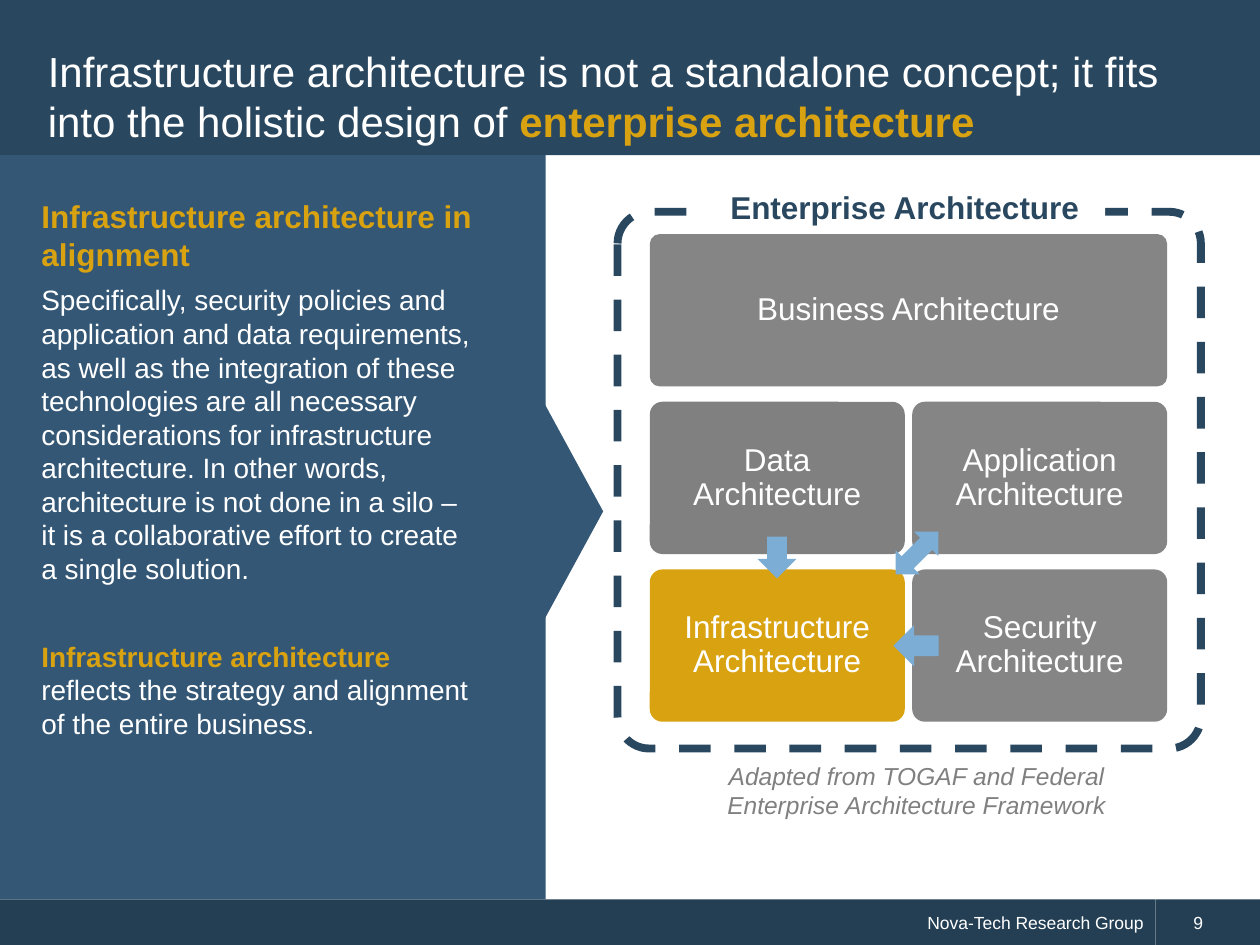
from dataclasses import dataclass

from lxml.etree import SubElement
from pptx import Presentation
from pptx.dml.color import RGBColor
from pptx.enum.dml import MSO_LINE
from pptx.enum.shapes import MSO_SHAPE
from pptx.enum.text import MSO_ANCHOR, MSO_AUTO_SIZE, PP_ALIGN
from pptx.oxml.ns import qn
from pptx.util import Cm, Pt


@dataclass(frozen=True)
class Theme:
    font: str = "Arial"
    white: str = "FFFFFF"
    navy: str = "29475F"
    foot: str = "243F54"
    panel: str = "335775"
    gold: str = "D9A210"
    grey: str = "858585"
    mid: str = "808080"
    sky: str = "7CADD4"
    title: int = 24
    head: int = 18
    body: int = 16
    note: int = 14
    small: int = 10


class Deck:
    """Holds the theme and the slide being built."""

    def __init__(self, theme):
        self.theme = theme
        self.prs = Presentation()
        self.prs.slide_width, self.prs.slide_height = Cm(25.4), Cm(19.05)
        self.slide = self.prs.slides.add_slide(self.prs.slide_layouts[1])

    def frame(self, item, anchor=MSO_ANCHOR.MIDDLE, **style):
        """Reset a shape's text frame, then apply any margins given."""
        frame = item.text_frame
        base = {"word_wrap": True, "auto_size": MSO_AUTO_SIZE.NONE,
                "vertical_anchor": anchor}
        for key, value in {**base, **style}.items():
            setattr(frame, key, value)
        return frame

    def para(self, frame, runs, size, first=True, **style):
        """Write one paragraph; runs are (text, colour, font style)."""
        para = frame.paragraphs[0] if first else frame.add_paragraph()
        base = {"alignment": PP_ALIGN.LEFT, "space_before": Pt(0)}
        for key, value in {**base, **style}.items():
            setattr(para, key, value)
        for text, tone, look in runs:
            for row, line in enumerate(text.split("\n")):
                if row:
                    para.add_line_break()
                run = para.add_run()
                run.text = line
                run.font.color.rgb = RGBColor.from_string(tone)
                base = {"name": self.theme.font, "size": Pt(size), "bold": False}
                for key, value in {**base, **look}.items():
                    setattr(run.font, key, value)
        return para

    def shape(self, kind, box, fill=None, round_by=None):
        item = self.slide.shapes.add_shape(kind, *map(Cm, box))
        item.shadow.inherit = False
        item.line.fill.background()
        if fill:
            item.fill.solid()
            item.fill.fore_color.rgb = RGBColor.from_string(fill)
        else:
            item.fill.background()
        if round_by:
            item.adjustments[0] = round_by
        return item

    def card(self, text, box, fill, round_by=0.083):
        item = self.shape(MSO_SHAPE.ROUNDED_RECTANGLE, box, fill, round_by)
        sides = ("left", "right", "top", "bottom")
        frame = self.frame(item, **{f"margin_{side}": 0 for side in sides})
        self.para(frame, [(text, self.theme.white, {})], self.theme.head,
                  alignment=PP_ALIGN.CENTER, line_spacing=0.9)

    def bar(self, text, box, align, inset):
        item = self.shape(MSO_SHAPE.RECTANGLE, box, self.theme.foot)
        frame = self.frame(item, margin_left=Cm(inset))
        self.para(frame, [(text, self.theme.white, {})], self.theme.small,
                  alignment=align)

    def holder(self, index, box, anchor):
        """Move a placeholder into place and bring it to the front."""
        item = self.slide.placeholders[index]
        item.left, item.top, item.width, item.height = map(Cm, box)
        self.slide.shapes.element.append(item.element)
        return self.frame(item, anchor)

    def title(self, runs, box):
        self.para(self.holder(0, box, MSO_ANCHOR.MIDDLE), runs, self.theme.title)

    def body(self, rows, box):
        """Fill the body placeholder with unbulleted (runs, size, gap) rows."""
        frame = self.holder(1, box, MSO_ANCHOR.TOP)
        for index, (runs, size, gap) in enumerate(rows):
            para = self.para(frame, runs, size, index == 0,
                             space_before=Pt(gap), space_after=Pt(6))
            props = para._p.get_or_add_pPr()
            props.set("marL", "0")
            props.set("indent", "0")
            SubElement(props, qn("a:buNone"))

    def border(self, box):
        item = self.shape(MSO_SHAPE.ROUNDED_RECTANGLE, box, round_by=0.059)
        item.line.color.rgb = RGBColor.from_string(self.theme.navy)
        item.line.width = Pt(4.5)
        item.line.dash_style = MSO_LINE.DASH

    def label(self, text, box):
        item = self.shape(MSO_SHAPE.RECTANGLE, box, self.theme.white)
        self.para(self.frame(item), [(text, self.theme.navy, {"bold": True})],
                  self.theme.head, alignment=PP_ALIGN.CENTER)

    def note(self, text, box):
        item = self.slide.shapes.add_textbox(*map(Cm, box))
        frame = self.frame(item, MSO_ANCHOR.TOP)
        self.para(frame, [(text, self.theme.mid, {"italic": True})],
                  self.theme.note, alignment=PP_ALIGN.CENTER)


def main():
    theme = Theme()
    deck = Deck(theme)
    bold = {"bold": True}

    deck.bar("Nova-Tech Research Group", (0, 18.13, 23.3, 0.92), PP_ALIGN.RIGHT, 0.98)
    deck.bar("9", (23.3, 18.13, 2.1, 0.92), PP_ALIGN.LEFT, 0.76)
    deck.shape(MSO_SHAPE.RECTANGLE, (0, 0, 25.4, 3.13), theme.navy)
    deck.title([
        ("Infrastructure architecture is not a standalone concept; it fits "
         "into the holistic design of ", theme.white, {}),
        ("enterprise architecture", theme.gold, bold),
    ], (0.71, 0.71, 23.95, 2.44))

    deck.shape(MSO_SHAPE.RECTANGLE, (0, 3.13, 11, 15), theme.panel)
    deck.shape(MSO_SHAPE.RIGHT_ARROW, (9.7, 8.05, 2.46, 4.52), theme.panel)
    deck.body([
        ([("Infrastructure architecture in alignment", theme.gold, bold)],
         theme.head, 0),
        ([("Specifically, security policies and application and data "
           "requirements, as well as the integration of these technologies are "
           "all necessary considerations for infrastructure architecture. In "
           "other words, architecture is not done in a silo – it is a "
           "collaborative effort to create a single solution.", theme.white, {})],
         theme.body, 0),
        ([("Infrastructure architecture ", theme.gold, bold),
          ("reflects the strategy and alignment of the entire business.",
           theme.white, {})], theme.body, 25),
    ], (0.58, 3.84, 9.27, 11.33))

    left, top, wide, high = 13.1, 4.72, 5.14, 3.07
    step_x, step_y = 5.29, 3.38
    deck.card("Business Architecture", (left, top, step_x + wide, high),
              theme.grey, 0.064)
    cells = [
        ("Data", 0, 1, theme.mid), ("Application", 1, 1, theme.grey),
        ("Infrastructure", 0, 2, theme.gold), ("Security", 1, 2, theme.grey),
    ]
    for name, col, row, fill in cells:
        box = (left + col * step_x, top + row * step_y, wide, high)
        deck.card(f"{name}\nArchitecture", box, fill)

    deck.note("Adapted from TOGAF and Federal Enterprise Architecture Framework",
              (13.26, 15.21, 10.44, 1.32))
    deck.border((12.45, 4.27, 11.76, 10.82))
    deck.label("Enterprise Architecture", (14.2, 3.66, 8.08, 1.02))

    arrows = [
        (MSO_SHAPE.LEFT_ARROW, (18.01, 12.6, 0.91, 0.84), 0),
        (MSO_SHAPE.DOWN_ARROW, (15.27, 10.82, 0.79, 0.84), 0),
        (MSO_SHAPE.UP_DOWN_ARROW, (18.14, 10.54, 0.69, 1.22), 45),
    ]
    for kind, box, turn in arrows:
        deck.shape(kind, box, theme.sky).rotation = turn

    deck.prs.save("out.pptx")


if __name__ == "__main__":
    main()
